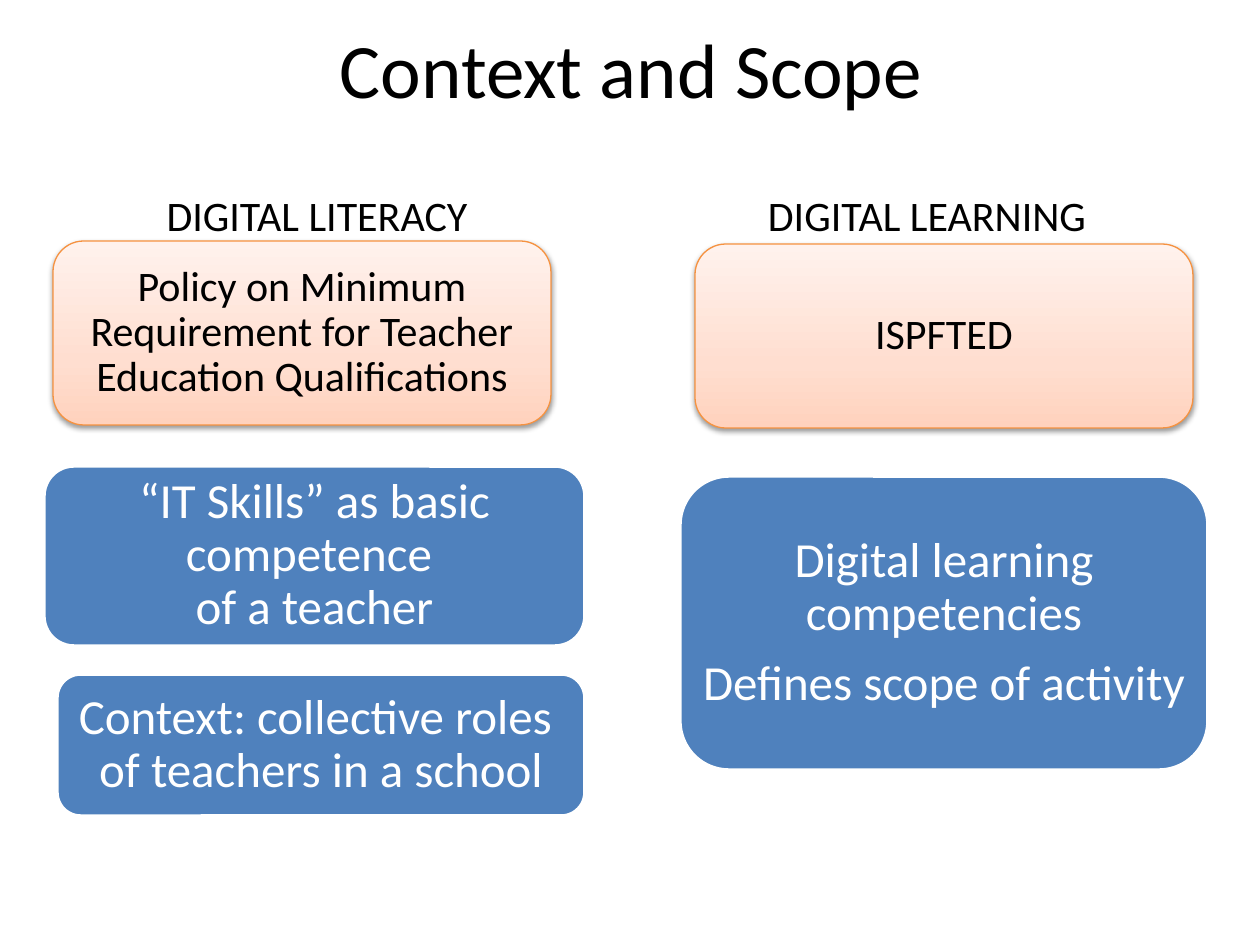
import pptx
import pptx.util
import pptx.dml.color
import pptx.enum.shapes
import pptx.enum.text
import pptx.oxml
import pptx.oxml.ns

RGB = pptx.dml.color.RGBColor
BLACK = RGB(0x00, 0x00, 0x00)
WHITE = RGB(0xFF, 0xFF, 0xFF)
BLUE = RGB(0x4F, 0x81, 0xBD)
ORANGE = RGB(0xF6, 0x92, 0x40)
PEACH_STOPS = [
    (0, RGB(0xFF, 0xD2, 0xBD)),
    (35, RGB(0xFF, 0xDE, 0xD0)),
    (100, RGB(0xFF, 0xF2, 0xED)),
]

EMU_PER_PX = 914400 / 126
FONT = "Calibri"

HEADINGS = [
    ("Context and Scope", 44, (64, -11, 1134, 158)),
    ("DIGITAL LITERACY", 24, (94, 183, 446, 63)),
    ("DIGITAL LEARNING", 24, (704, 183, 446, 63)),
]
POLICIES = [
    (["Policy on Minimum Requirement for Teacher Education Qualifications"],
     (53, 241, 498, 184)),
    (["ISPFTED"], (695, 244, 498, 184)),
]
COMPETENCES = [
    (["“IT Skills” as basic competence \nof a teacher"], (44, 466, 541, 180), 15),
    (["Context: collective roles \nof teachers in a school"], (57, 674, 528, 142), 15),
    (["Digital learning competencies", "Defines scope of activity"],
     (680, 476, 528, 294), 8),
]


def px(length):
    return pptx.util.Emu(round(length * EMU_PER_PX))


def write(frame, paragraphs, size, color, line_spacing=1.0, space_after=0):
    frame.word_wrap = True
    frame.vertical_anchor = pptx.enum.text.MSO_ANCHOR.MIDDLE
    for index, text in enumerate(paragraphs):
        paragraph = frame.paragraphs[0] if index == 0 else frame.add_paragraph()
        paragraph.alignment = pptx.enum.text.PP_ALIGN.CENTER
        paragraph.line_spacing = line_spacing
        paragraph.space_after = pptx.util.Pt(space_after)
        for number, line in enumerate(text.split("\n")):
            if number:
                paragraph.add_line_break()
            run = paragraph.add_run()
            run.text = line
            run.font.name = FONT
            run.font.size = pptx.util.Pt(size)
            run.font.color.rgb = color


def add_box(slide, paragraphs, place, side_inset, inset, size, color, outline, width):
    box = slide.shapes.add_shape(
        pptx.enum.shapes.MSO_SHAPE.ROUNDED_RECTANGLE, *map(px, place))
    box.shadow.inherit = False
    box.line.color.rgb = outline
    box.line.width = pptx.util.Pt(width)
    frame = box.text_frame
    frame.margin_left = frame.margin_right = px(side_inset)
    frame.margin_top = frame.margin_bottom = px(inset)
    write(frame, paragraphs, size, color, 0.9, round(size * 0.35, 1))
    return box


def add_peach_finish(box):
    namespace = pptx.oxml.ns.nsdecls("a")
    box.fill.gradient()
    box.fill.gradient_angle = 90
    properties = box.element.spPr
    stops = properties.find(".//" + pptx.oxml.ns.qn("a:gsLst"))
    for stop in list(stops):
        stops.remove(stop)
    for position, color in PEACH_STOPS:
        stops.append(pptx.oxml.parse_xml(
            f'<a:gs {namespace} pos="{position * 1000}"><a:srgbClr val="{color}"/></a:gs>'))
    properties.find(pptx.oxml.ns.qn("a:effectLst")).append(pptx.oxml.parse_xml(
        f'<a:outerShdw {namespace} blurRad="40000" dist="20000" dir="5400000" rotWithShape="0">'
        f'<a:srgbClr val="{BLACK}"><a:alpha val="38000"/></a:srgbClr></a:outerShdw>'))


def main():
    deck = pptx.Presentation()
    deck.slide_width, deck.slide_height = px(1260), px(945)
    slide = deck.slides.add_slide(deck.slide_layouts[6])

    for text, size, place in HEADINGS:
        heading = slide.shapes.add_textbox(*map(px, place))
        write(heading.text_frame, [text], size, BLACK)

    for paragraphs, place in POLICIES:
        add_peach_finish(add_box(slide, paragraphs, place, 13, 13, 24, BLACK, ORANGE, 0.75))

    for paragraphs, place, side_inset in COMPETENCES:
        box = add_box(slide, paragraphs, place, side_inset, 15, 28, WHITE, WHITE, 2)
        box.fill.solid()
        box.fill.fore_color.rgb = BLUE

    deck.save("out.pptx")


if __name__ == "__main__":
    main()
